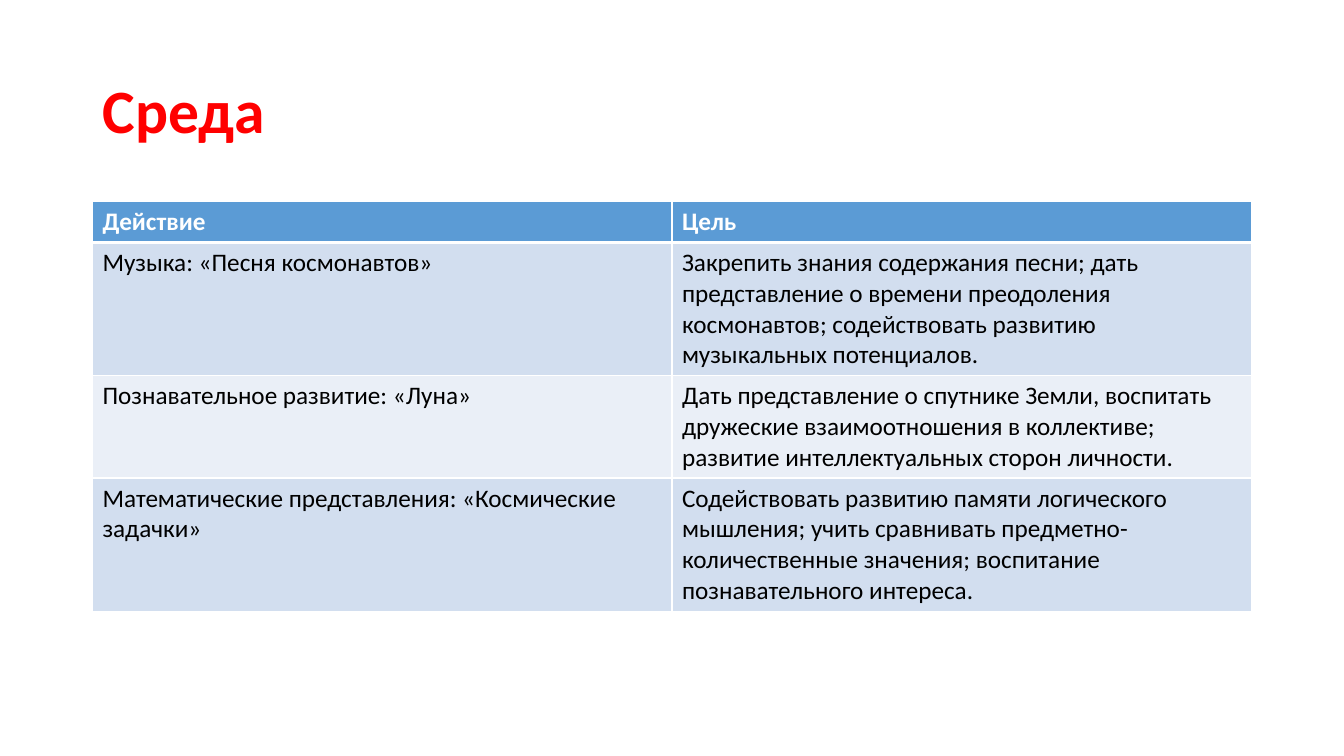
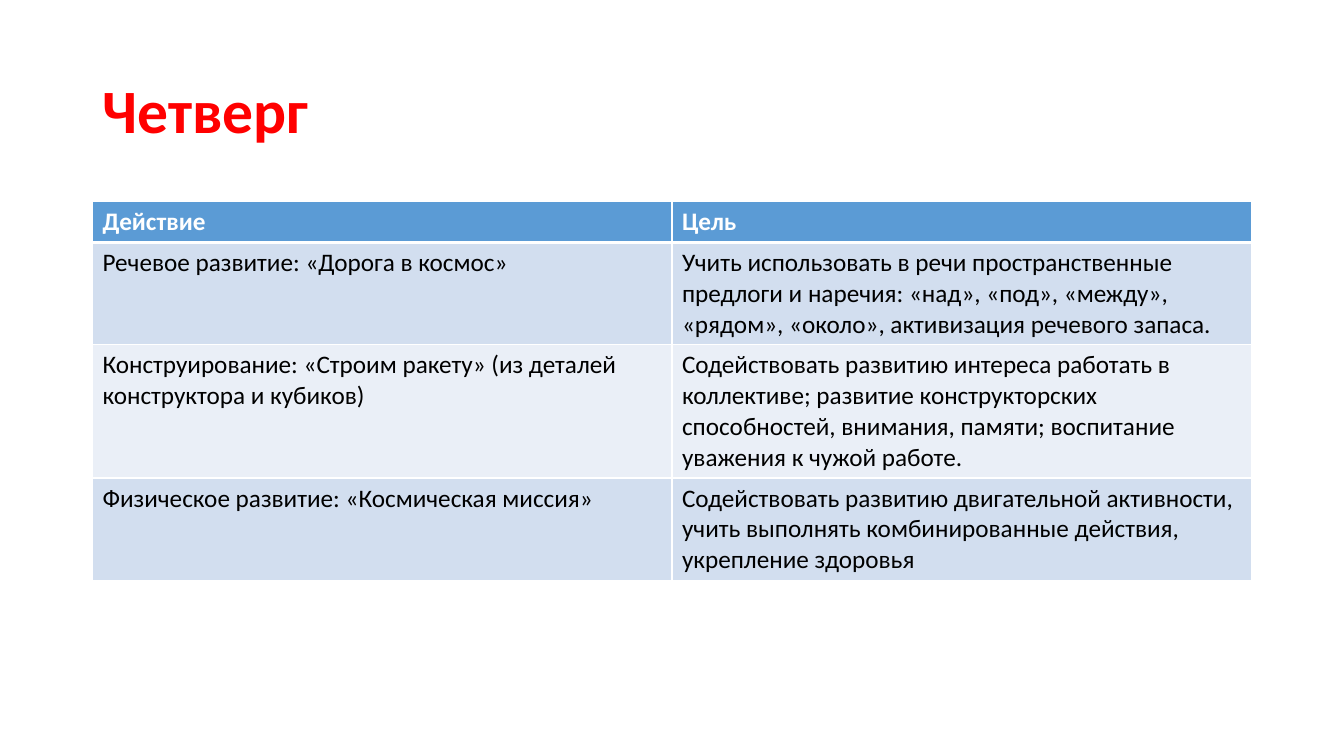
from lxml.etree import SubElement
from pptx import Presentation
from pptx.dml.color import RGBColor
from pptx.enum.text import MSO_ANCHOR, PP_ALIGN
from pptx.oxml.ns import qn
from pptx.util import Cm, Pt

# Shared style
FONT = "Calibri"
RED = RGBColor(0xFF, 0x00, 0x00)
WHITE = RGBColor(0xFF, 0xFF, 0xFF)
BLACK = RGBColor(0x00, 0x00, 0x00)
HEADER_BLUE = RGBColor(0x5B, 0x9B, 0xD5)
BAND_FILLS = (RGBColor(0xEA, 0xEF, 0xF7), RGBColor(0xD2, 0xDE, 0xEF))

LEFT, WIDTH = Cm(2.33), Cm(29.21)
TITLE_TOP, TITLE_HEIGHT = Cm(1.01), Cm(3.68)
TABLE_TOP, ROW_HEIGHT = Cm(5.08), Cm(1.03)
THIN, THICK = Pt(1), Pt(3)
TITLE_ONLY = 5

# Content: each day has rows of action and goal
HEADER = ("Действие", "Цель")
DAYS = {
    "Среда": [
        ("Музыка: «Песня космонавтов»",
         "Закрепить знания содержания песни; дать представление о времени "
         "преодоления космонавтов; содействовать развитию музыкальных потенциалов."),
        ("Познавательное развитие: «Луна»",
         "Дать представление о спутнике Земли, воспитать дружеские "
         "взаимоотношения в коллективе; развитие интеллектуальных сторон личности."),
        ("Математические представления: «Космические задачки»",
         "Содействовать развитию памяти логического мышления; учить сравнивать "
         "предметно-количественные значения; воспитание познавательного интереса."),
    ],
    "Четверг": [
        ("Речевое развитие: «Дорога в космос»",
         "Учить использовать в речи пространственные предлоги и наречия: «над», "
         "«под», «между», «рядом», «около», активизация речевого запаса."),
        ("Конструирование: «Строим ракету» (из деталей конструктора и кубиков)",
         "Содействовать развитию интереса работать в коллективе; развитие "
         "конструкторских способностей, внимания, памяти; воспитание уважения "
         "к чужой работе."),
        ("Физическое развитие: «Космическая миссия»",
         "Содействовать развитию двигательной активности, учить выполнять "
         "комбинированные действия, укрепление здоровья"),
    ],
}


def set_font(paragraph, size, color, bold):
    font = paragraph.font
    font.name, font.size, font.bold = FONT, Pt(size), bold
    font.color.rgb = color


def set_borders(cell, top, bottom):
    """Draw white cell borders; they must precede the fill in the XML."""
    properties = cell._tc.get_or_add_tcPr()
    for tag, width in (("lnL", THIN), ("lnR", THIN), ("lnT", top), ("lnB", bottom)):
        line = SubElement(properties, qn(f"a:{tag}"), w=str(width))
        fill = SubElement(line, qn("a:solidFill"))
        SubElement(fill, qn("a:srgbClr"), val=str(WHITE))


def add_title(slide, text):
    title = slide.shapes.title
    title.left, title.top = LEFT, TITLE_TOP
    title.width, title.height = WIDTH, TITLE_HEIGHT
    title.text_frame.text = text
    title.text_frame.vertical_anchor = MSO_ANCHOR.MIDDLE
    paragraph = title.text_frame.paragraphs[0]
    paragraph.alignment = PP_ALIGN.LEFT
    paragraph.line_spacing = 0.9
    set_font(paragraph, 44, RED, True)


def format_cell(cell, text, row_index):
    is_header = row_index == 0
    set_borders(cell, THICK if row_index == 1 else THIN, THICK if is_header else THIN)
    cell.fill.solid()
    cell.fill.fore_color.rgb = HEADER_BLUE if is_header else BAND_FILLS[row_index % 2]
    cell.text = text
    set_font(cell.text_frame.paragraphs[0], 18, WHITE if is_header else BLACK, is_header)


def add_plan_table(slide, rows):
    table = slide.shapes.add_table(len(rows), len(HEADER), LEFT, TABLE_TOP,
                                   WIDTH, ROW_HEIGHT * len(rows)).table
    for row_index, texts in enumerate(rows):
        for column_index, text in enumerate(texts):
            format_cell(table.cell(row_index, column_index), text, row_index)


def main():
    presentation = Presentation()
    presentation.slide_width, presentation.slide_height = Cm(33.87), Cm(19.05)
    for day, activities in DAYS.items():
        slide = presentation.slides.add_slide(presentation.slide_layouts[TITLE_ONLY])
        add_title(slide, day)
        add_plan_table(slide, [HEADER, *activities])
    presentation.save("out.pptx")


if __name__ == "__main__":
    main()
